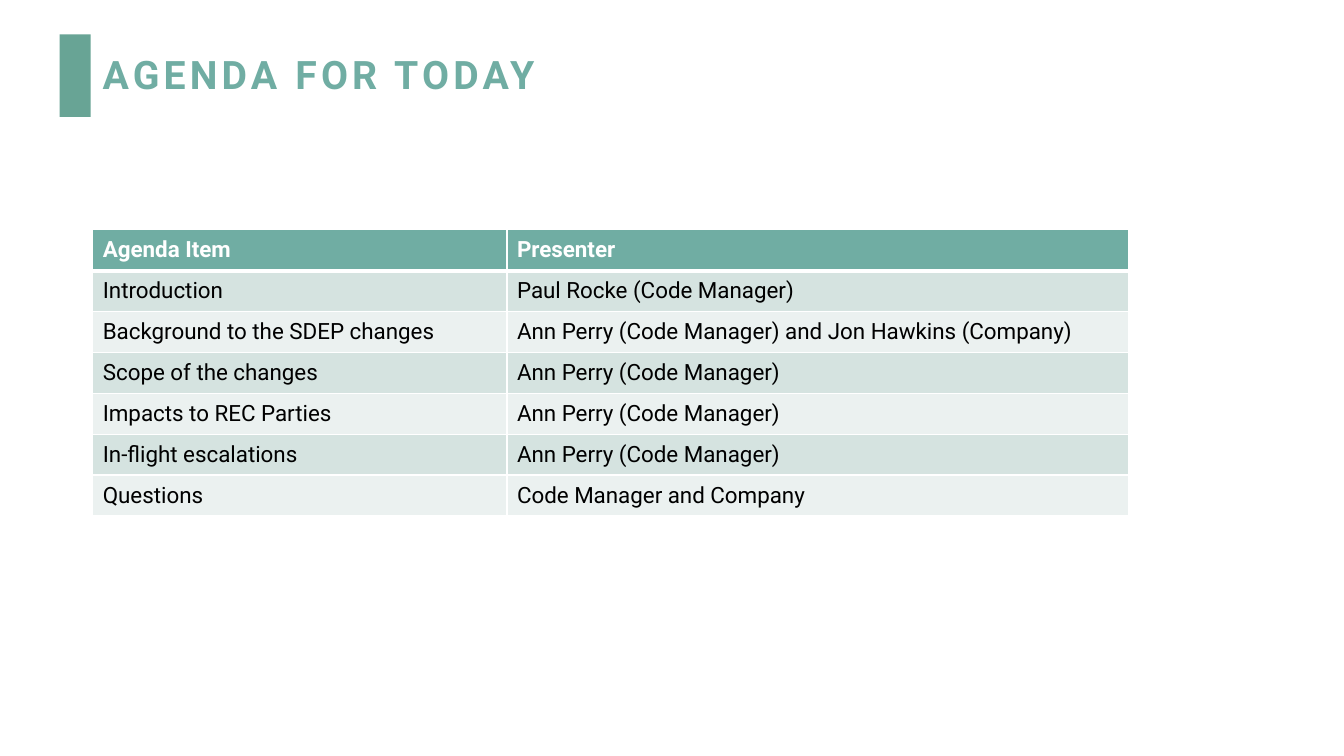
import pptx
import pptx.util
import pptx.dml.color
import pptx.enum.shapes
import pptx.enum.text
import pptx.oxml.ns
from lxml import etree

WIDE, HIGH = 13.33, 7.5
FONT = "Roboto"
TEAL, BAR, WHITE, BLACK = "70ADA3", "68A495", "FFFFFF", "000000"
BANDS = ["D5E3E0", "EBF1F0"]
MIDDLE = pptx.enum.text.MSO_ANCHOR.MIDDLE

AGENDA = [
    ("Agenda Item", "Presenter"),
    ("Introduction", "Paul Rocke (Code Manager)"),
    ("Background to the SDEP changes",
     "Ann Perry (Code Manager) and Jon Hawkins (Company)"),
    ("Scope of the changes", "Ann Perry (Code Manager)"),
    ("Impacts to REC Parties", "Ann Perry (Code Manager)"),
    ("In-flight escalations", "Ann Perry (Code Manager)"),
    ("Questions", "Code Manager and Company"),
]


def tint(text):
    return pptx.dml.color.RGBColor.from_string(text)


def inches(*sizes):
    return [pptx.util.Inches(size) for size in sizes]


def style(para, size, color, bold):
    font = para.runs[0].font
    font.name, font.size, font.bold = FONT, pptx.util.Pt(size), bold
    font.color.rgb = tint(color)


def edge(cell, side, points):
    """Draw one white border; call before filling the cell."""
    props = cell._tc.get_or_add_tcPr()
    line = etree.SubElement(props, pptx.oxml.ns.qn("a:ln" + side),
                            w=str(pptx.util.Pt(points)))
    fill = etree.SubElement(line, pptx.oxml.ns.qn("a:solidFill"))
    etree.SubElement(fill, pptx.oxml.ns.qn("a:srgbClr"), val=WHITE)


def add_title(slide, left, top, width, height):
    """Place the accent bar and the spaced heading beside it."""
    bar = slide.shapes.add_shape(
        pptx.enum.shapes.MSO_SHAPE.RECTANGLE,
        *inches(left, top, 0.31, height))
    bar.shadow.inherit = False
    bar.fill.solid()
    bar.fill.fore_color.rgb = tint(BAR)
    bar.line.fill.background()

    box = slide.shapes.add_textbox(
        *inches(left + 0.33, top + 0.06, width - 0.33, height - 0.1))
    frame = box.text_frame
    frame.word_wrap = True
    frame.vertical_anchor = MIDDLE
    frame.text = "AGENDA FOR TODAY"
    para = frame.paragraphs[0]
    para.line_spacing = 0.9
    style(para, 28, TEAL, True)
    para.runs[0].font._element.set("spc", "300")


def add_agenda(slide, left, top, width, height):
    count = len(AGENDA)
    table = slide.shapes.add_table(
        count, 2, *inches(left, top, width, height)).table
    for column, share in zip(table.columns, (0.4, 0.6)):
        column.width = pptx.util.Inches(width * share)
    for index, words in enumerate(AGENDA):
        head = index == 0
        table.rows[index].height = pptx.util.Inches(height / count)
        for cell, text in zip(table.rows[index].cells, words):
            for side in "LRTB":
                thick = (index, side) in ((0, "B"), (1, "T"))
                edge(cell, side, 3 if thick else 1)
            cell.fill.solid()
            cell.fill.fore_color.rgb = tint(
                TEAL if head else BANDS[(index - 1) % 2])
            cell.vertical_anchor = MIDDLE
            cell.text_frame.text = text
            style(cell.text_frame.paragraphs[0], 16,
                  WHITE if head else BLACK, head)


def main():
    deck = pptx.Presentation()
    deck.slide_width, deck.slide_height = inches(WIDE, HIGH)
    slide = deck.slides.add_slide(deck.slide_layouts[6])
    add_title(slide, 0.59, 0.34, 10.48, 0.82)
    add_agenda(slide, 0.92, 2.28, 10.27, 2.84)
    deck.save("out.pptx")


if __name__ == "__main__":
    main()
